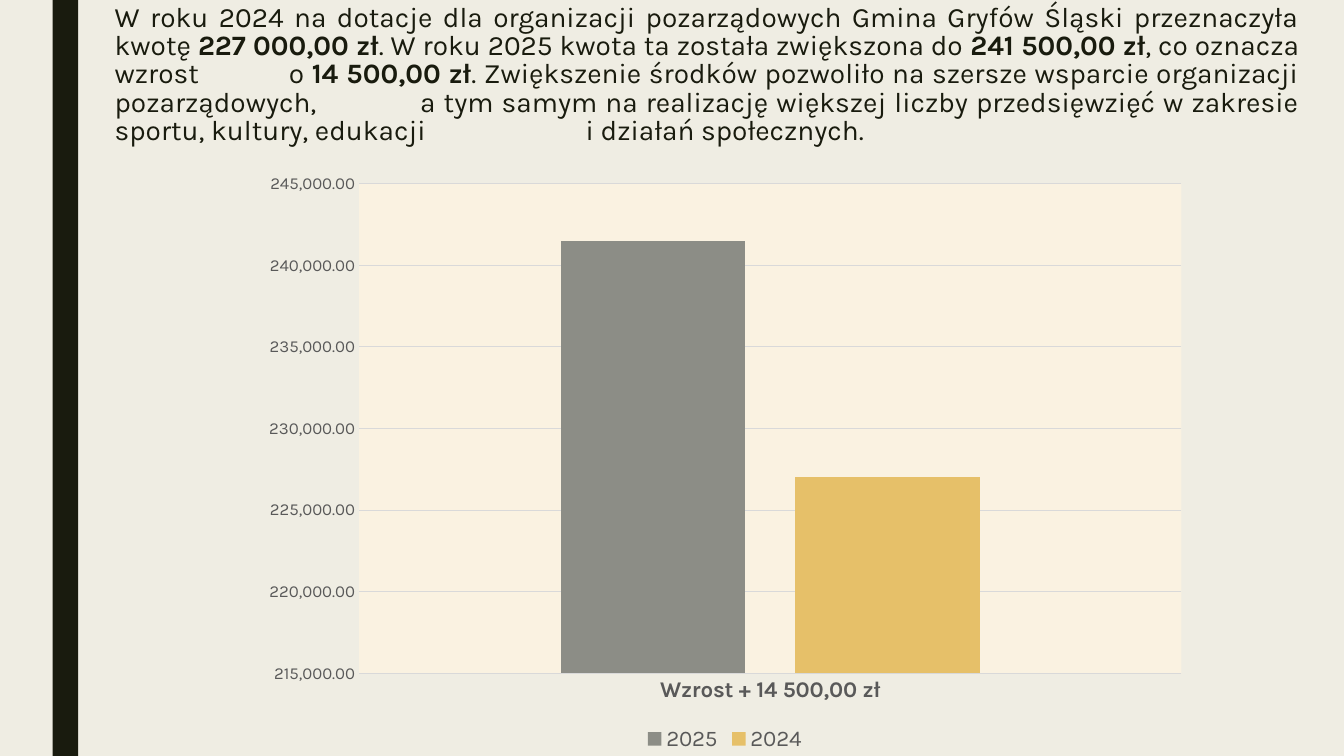
from lxml import etree
from pptx import Presentation
from pptx.chart.data import CategoryChartData
from pptx.dml.color import RGBColor
from pptx.enum.chart import XL_CHART_TYPE as ChartType
from pptx.enum.chart import XL_LEGEND_POSITION as LegendPosition
from pptx.enum.chart import XL_TICK_MARK as TickMark
from pptx.enum.shapes import MSO_SHAPE as ShapeKind
from pptx.enum.text import MSO_ANCHOR as Anchor
from pptx.enum.text import PP_ALIGN as Align
from pptx.oxml import parse_xml
from pptx.oxml.ns import nsdecls, qn
from pptx.util import Cm, Pt

GRANTS = {"2025": (241500, "8C8D86"), "2024": (227000, "E6C069")}
SUMMARY = [
    ("W roku 2024 na dotacje dla organizacji pozarządowych Gmina Gryfów Śląski przeznaczyła kwotę ", False),
    ("227 000,00 zł", True),
    (". W roku 2025 kwota ta została zwiększona do ", False),
    ("241 500,00 zł", True),
    (", co oznacza wzrost\to ", False),
    ("14 500,00 zł", True),
    (". Zwiększenie środków pozwoliło na szersze wsparcie organizacji pozarządowych,\ta tym samym "
     "na realizację większej liczby przedsięwzięć w zakresie sportu, kultury, edukacji\ti działań społecznych.", False),
]


def color(value):
    return RGBColor.from_string(value)


def format_font(font, size, fill, bold=False, name="Karla"):
    font.name = name
    font.size = Pt(size)
    font.bold = bold
    font.color.rgb = color(fill)


def add_text(paragraph, text, **style):
    run = paragraph.add_run()
    run.text = text
    format_font(run.font, **style)


class GrantSlide:
    ink = "191B0E"
    paper = "EFEDE3"
    label = "595959"
    rule = "D9D9D9"
    plot_fill = "FAF2E1"

    def __init__(self, presentation):
        self.slide = presentation.slides.add_slide(presentation.slide_layouts[6])
        background = self.slide.background.fill
        background.solid()
        background.fore_color.rgb = color(self.paper)

    def bar(self, left, top, width, height, fill):
        shape = self.slide.shapes.add_shape(ShapeKind.RECTANGLE, Cm(left), Cm(top), Cm(width), Cm(height))
        shape.shadow.inherit = False
        shape.fill.solid()
        shape.fill.fore_color.rgb = color(fill)
        shape.line.fill.background()
        return shape

    def body(self, left, top, width, height, parts, tab_stops):
        frame = self.bar(left, top, width, height, self.paper).text_frame
        frame.word_wrap = True
        frame.vertical_anchor = Anchor.TOP
        paragraph = frame.paragraphs[0]
        paragraph.alignment = Align.JUSTIFY
        paragraph.line_spacing = 0.84
        paragraph.space_before = Pt(10)
        paragraph.space_after = Pt(2)
        for text, bold in parts:
            add_text(paragraph, text, size=20, fill=self.ink, bold=bold)
        properties = paragraph._p.get_or_add_pPr()
        tabs = etree.SubElement(properties, qn("a:tabLst"))
        for stop in tab_stops:
            etree.SubElement(tabs, qn("a:tab"), pos=str(Cm(stop)), algn="l")

    def column_chart(self, left, top, width, height, category, grants):
        data = CategoryChartData(number_format="#,##0.00")
        data.categories = [category]
        for year, (amount, _) in grants.items():
            data.add_series(year, [amount])
        frame = self.slide.shapes.add_chart(
            ChartType.COLUMN_CLUSTERED, Cm(left), Cm(top), Cm(width), Cm(height), data)
        chart = frame.chart
        chart.has_title = False
        format_font(chart.font, size=10, fill="000000")
        self.columns(chart.plots[0], grants)
        self.axes(chart)
        chart.has_legend = True
        chart.legend.position = LegendPosition.BOTTOM
        chart.legend.include_in_layout = False
        format_font(chart.legend.font, size=16, fill=self.label)
        self.plot_area(chart, x=0.115, y=0.036, w=0.866, h=0.825)

    def columns(self, plot, grants):
        plot.gap_width = 219
        plot.overlap = -27
        plot.vary_by_categories = False
        for series, (_, fill) in zip(plot.series, grants.values()):
            series.format.fill.solid()
            series.format.fill.fore_color.rgb = color(fill)

    def axes(self, chart):
        category_axis, value_axis = chart.category_axis, chart.value_axis
        for axis, size, bold in ((category_axis, 16, True), (value_axis, 12, False)):
            axis.major_tick_mark = axis.minor_tick_mark = TickMark.NONE
            format_font(axis.tick_labels.font, size=size, fill=self.label, bold=bold)
        value_axis.minimum_scale = 215000
        value_axis.maximum_scale = 245000
        value_axis.major_unit = 5000
        value_axis.tick_labels.number_format = "#,##0.00"
        value_axis.tick_labels.number_format_is_linked = False
        value_axis.format.line.fill.background()
        for line in (category_axis.format.line, value_axis.major_gridlines.format.line):
            line.width = Pt(0.75)
            line.color.rgb = color(self.rule)

    def plot_area(self, chart, **box):
        area = chart._chartSpace.chart.plotArea
        for layout in area.findall(qn("c:layout")):
            area.remove(layout)
        modes = '<c:layoutTarget val="inner"/><c:xMode val="edge"/><c:yMode val="edge"/>'
        places = "".join(f'<c:{key} val="{value}"/>' for key, value in box.items())
        area.insert(0, parse_xml(
            f'<c:layout {nsdecls("c")}><c:manualLayout>{modes}{places}</c:manualLayout></c:layout>'))
        area.append(parse_xml(
            f'<c:spPr {nsdecls("c", "a")}><a:solidFill><a:srgbClr val="{self.plot_fill}"/>'
            '</a:solidFill></c:spPr>'))


def main():
    presentation = Presentation()
    presentation.slide_width = Cm(33.87)
    presentation.slide_height = Cm(19.05)
    page = GrantSlide(presentation)
    page.bar(1.33, 0, 0.64, 19.05, page.ink)
    page.body(2.64, 0, 30.35, 4.09, SUMMARY, tab_stops=(4.39, 7.7, 11.87))
    page.column_chart(6.3, 4.09, 23.93, 14.96, "Wzrost + 14 500,00 zł", GRANTS)
    presentation.save("out.pptx")


if __name__ == "__main__":
    main()
